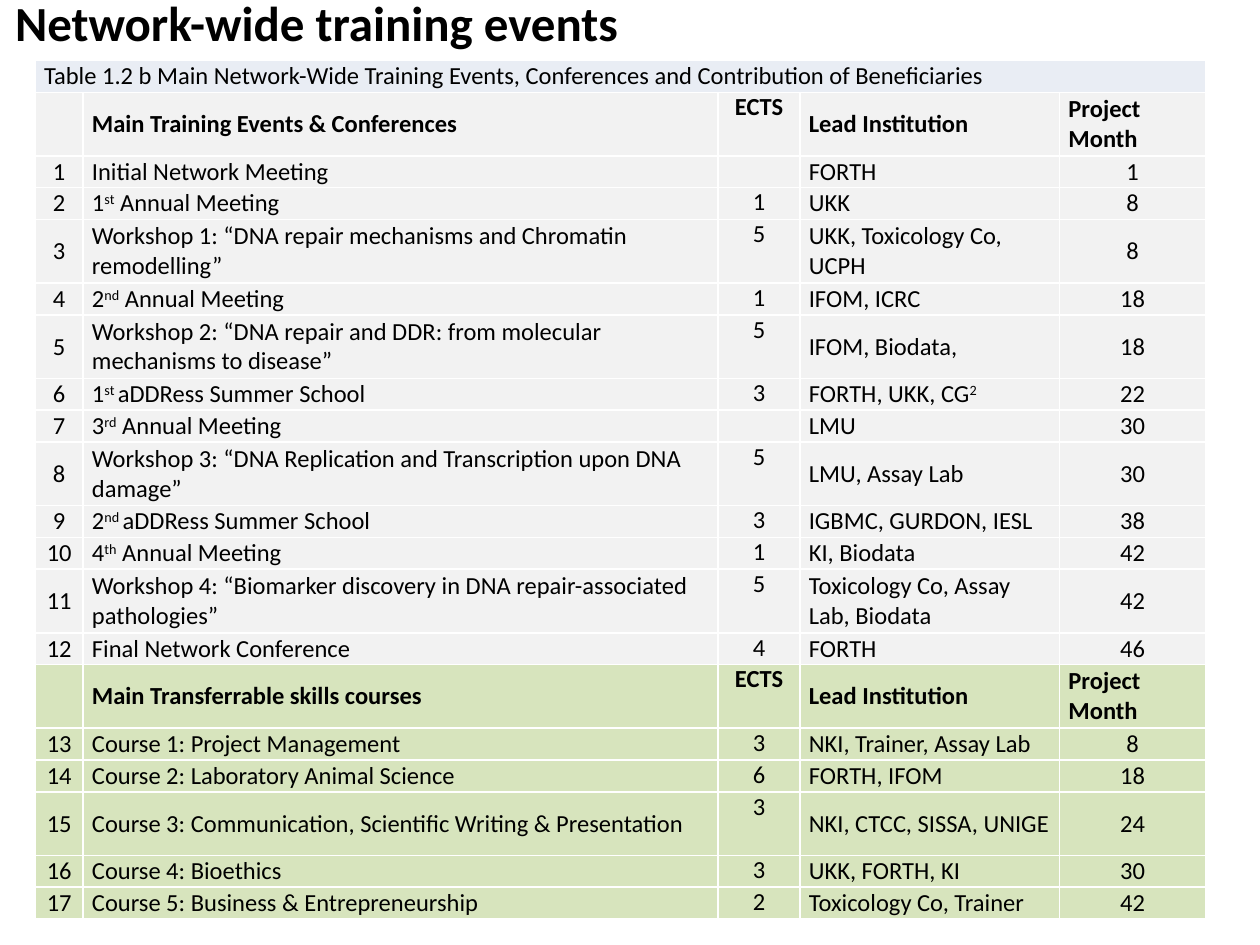
from lxml import etree
from pptx import Presentation
from pptx.dml.color import RGBColor
from pptx.enum.text import MSO_ANCHOR, MSO_AUTO_SIZE, PP_ALIGN
from pptx.oxml.ns import qn
from pptx.util import Inches, Pt

LEFT, CENTER = PP_ALIGN.LEFT, PP_ALIGN.CENTER
TOP, MIDDLE = MSO_ANCHOR.TOP, MSO_ANCHOR.MIDDLE
NO_AUTOFIT = MSO_AUTO_SIZE.NONE

SLIDE_WIDTH, SLIDE_HEIGHT = Inches(10), Inches(7.5)
COLORS = {"text": "000000", "border": "FFFFFF", "caption": "E9EDF4",
          "events": "F2F2F2", "courses": "D7E4BD"}
FONT = "Calibri"
BODY_SIZE = 14
COLUMN_WIDTHS = [0.38, 5.04, 0.65, 2.06, 1.16]
ECTS_COLUMN = 2
COLUMN_ALIGNMENTS = [CENTER, LEFT, CENTER, LEFT, CENTER]
HEADER_ALIGNMENTS = [LEFT, LEFT, CENTER, LEFT, LEFT]

CAPTION = ("Table 1.2 b Main Network-Wide Training Events, Conferences "
           "and Contribution of Beneficiaries")
EVENTS = [
    (1, "Initial Network Meeting", "", "FORTH", "1"),
    (1, "1^st^ Annual Meeting", "1", "UKK", "8"),
    (2, "Workshop 1: “DNA repair mechanisms and Chromatin remodelling”", "5",
     "UKK, Toxicology Co, UCPH", "8"),
    (1, "2^nd^ Annual Meeting", "1", "IFOM, ICRC", "18"),
    (2, "Workshop 2: “DNA repair and DDR: from molecular mechanisms to disease”", "5",
     "IFOM, Biodata,", "18"),
    (1, "1^st ^aDDRess Summer School", "3", "FORTH, UKK, CG^2", "22"),
    (1, "3^rd^ Annual Meeting", "", "LMU", "30"),
    (2, "Workshop 3: “DNA Replication and Transcription upon DNA damage”", "5",
     "LMU, Assay Lab", "30"),
    (1, "2^nd ^aDDRess Summer School", "3", "IGBMC, GURDON, IESL", "38"),
    (1, "4^th^ Annual Meeting", "1", "KI, Biodata", "42"),
    (2, "Workshop 4: “Biomarker discovery in DNA repair-associated pathologies”", "5",
     "Toxicology Co, Assay Lab, Biodata", "42"),
    (1, "Final Network Conference", "4", "FORTH", "46"),
]
COURSES = [
    (1, "Course 1: Project Management", "3", "NKI, Trainer, Assay Lab", "8"),
    (1, "Course 2: Laboratory Animal Science", "6", "FORTH, IFOM", "18"),
    (2, "Course 3: Communication, Scientific Writing & Presentation", "3",
     "NKI, CTCC, SISSA, UNIGE", "24"),
    (1, "Course 4: Bioethics", "3", "UKK, FORTH, KI", "30"),
    (1, "Course 5: Business & Entrepreneurship", "2", "Toxicology Co, Trainer", "42"),
]
SECTIONS = [("events", "Main Training Events & Conferences", EVENTS),
            ("courses", "Main Transferrable skills courses", COURSES)]


def share_box(left, top, width, height):
    """Turn shares of the slide into a box in EMU."""
    return (int(left * SLIDE_WIDTH), int(top * SLIDE_HEIGHT),
            int(width * SLIDE_WIDTH), int(height * SLIDE_HEIGHT))


def format_font(font, size, bold):
    """Apply the slide's typeface and text colour."""
    font.name, font.size, font.bold = FONT, Pt(size), bold
    font.color.rgb = RGBColor.from_string(COLORS["text"])


def add_borders(cell):
    """Draw a thin border on all four sides of a cell."""
    properties = cell._tc.get_or_add_tcPr()
    for position, side in enumerate(("lnL", "lnR", "lnT", "lnB")):
        line = etree.Element(qn(f"a:{side}"), w=str(Pt(1)))
        fill = etree.SubElement(line, qn("a:solidFill"))
        etree.SubElement(fill, qn("a:srgbClr"), val=COLORS["border"])
        properties.insert(position, line)


def write_cell(cell, text, color, alignment=LEFT, anchor=MIDDLE, bold=False):
    """Fill one cell and set its text, raising the parts between carets."""
    cell.fill.solid()
    cell.fill.fore_color.rgb = RGBColor.from_string(COLORS[color])
    add_borders(cell)
    cell.margin_left = cell.margin_right = Inches(0.07)
    cell.margin_top = cell.margin_bottom = 0
    cell.vertical_anchor = anchor
    paragraph = cell.text_frame.paragraphs[0]
    paragraph.alignment = alignment
    if not text:
        etree.SubElement(paragraph._p, qn("a:endParaRPr"), sz=str(BODY_SIZE * 100))
        return
    for index, part in enumerate(text.split("^")):
        if part:
            run = paragraph.add_run()
            run.text = part
            format_font(run.font, BODY_SIZE, bold)
            if index % 2:
                run._r.get_or_add_rPr().set("baseline", "30000")


def table_rows():
    """List line count, colour, header flag and texts of each row below the caption."""
    rows, number = [], 0
    for color, heading, entries in SECTIONS:
        rows.append((2, color, True, ("", heading, "ECTS", "Lead Institution", "Project Month")))
        for lines, *texts in entries:
            number += 1
            rows.append((lines, color, False, (str(number), *texts)))
    return rows


def add_title(slide, box):
    """Place the slide title."""
    title = slide.shapes.title
    title.left, title.top, title.width, title.height = box
    frame = title.text_frame
    frame.text = "Network-wide training events"
    frame.word_wrap = False
    frame.auto_size = NO_AUTOFIT
    frame.vertical_anchor = TOP
    frame.paragraphs[0].alignment = LEFT
    format_font(frame.paragraphs[0].runs[0].font, 28, True)


def add_training_table(slide, box):
    """Place the table of events and courses on a grid of text lines."""
    rows = table_rows()
    left, top, width, height = box
    table = slide.shapes.add_table(len(rows) + 1, len(COLUMN_WIDTHS), *box).table
    table.first_row = table.horz_banding = False
    for column, share in zip(table.columns, COLUMN_WIDTHS):
        column.width = int(width * share / sum(COLUMN_WIDTHS))
    line_counts = [1] + [row[0] for row in rows]
    for row, lines in zip(table.rows, line_counts):
        row.height = int(height * lines / sum(line_counts))

    table.cell(0, 0).merge(table.cell(0, len(COLUMN_WIDTHS) - 1))
    write_cell(table.cell(0, 0), CAPTION, "caption")
    for row_index, (_, color, is_header, texts) in enumerate(rows, start=1):
        alignments = HEADER_ALIGNMENTS if is_header else COLUMN_ALIGNMENTS
        for column_index, text in enumerate(texts):
            anchor = TOP if column_index == ECTS_COLUMN else MIDDLE
            write_cell(table.cell(row_index, column_index), text, color,
                       alignments[column_index], anchor, is_header)


def main():
    """Build and save the slide."""
    presentation = Presentation()
    presentation.slide_width, presentation.slide_height = SLIDE_WIDTH, SLIDE_HEIGHT
    slide = presentation.slides.add_slide(presentation.slide_layouts[5])
    add_title(slide, share_box(0.002, -0.015, 0.506, 0.076))
    add_training_table(slide, share_box(0.028, 0.064, 0.929, 0.909))
    presentation.save("out.pptx")


if __name__ == "__main__":
    main()
